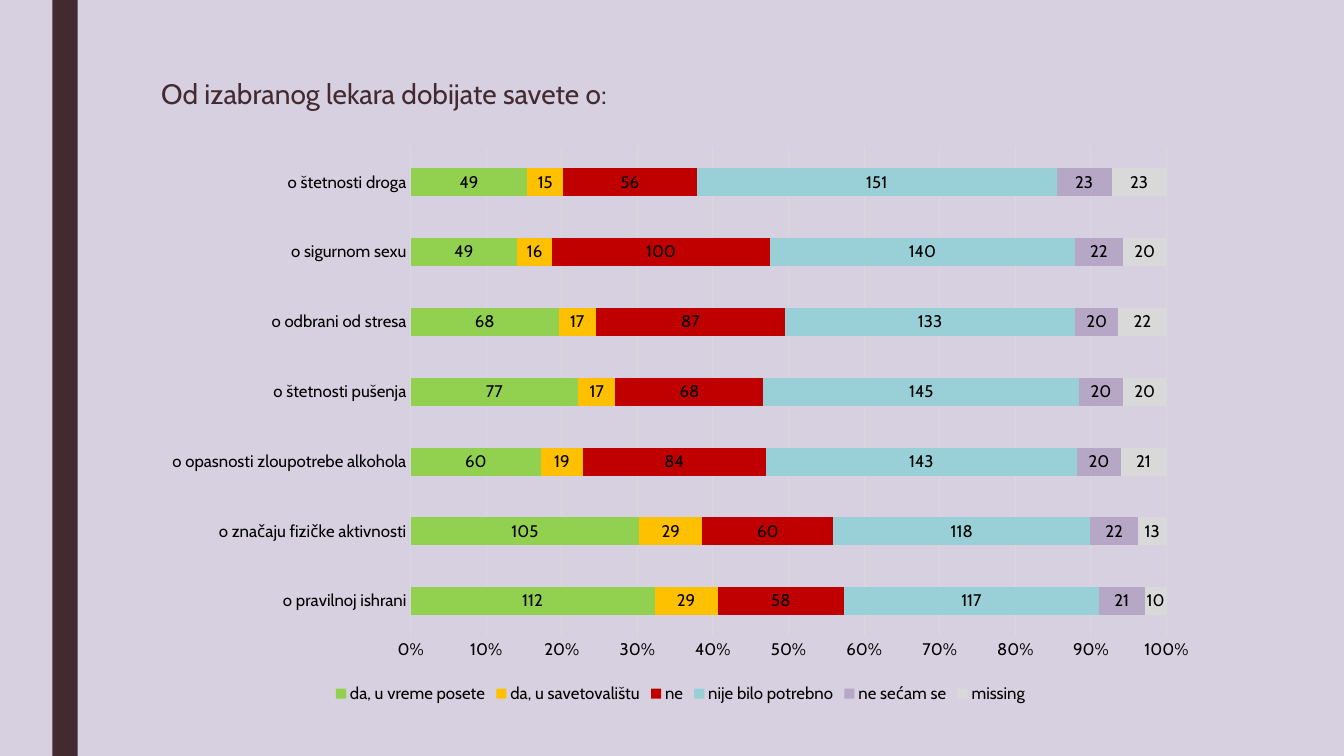
"""Build a slide with a stacked bar chart of advice given by the chosen doctor."""
from dataclasses import dataclass

from lxml import etree
from pptx import Presentation
from pptx import util as u
from pptx.chart import data as cd
from pptx.dml import color as col
from pptx.enum import chart as ce, shapes, text

TITLE = "Od izabranog lekara dobijate savete o:"
TOPICS = [
    "o pravilnoj ishrani",
    "o značaju fizičke aktivnosti",
    "o opasnosti zloupotrebe alkohola",
    "o štetnosti pušenja",
    "o odbrani od stresa",
    "o sigurnom sexu",
    "o štetnosti droga",
]
REPLIES = [
    ("da, u vreme posete", "92D050", (112, 105, 60, 77, 68, 49, 49)),
    ("da, u savetovalištu", "FFC000", (29, 29, 19, 17, 17, 16, 15)),
    ("ne", "C00000", (58, 60, 84, 68, 87, 100, 56)),
    ("nije bilo potrebno", "99D0D7", (117, 118, 143, 145, 133, 140, 151)),
    ("ne sećam se", "B5A7C5", (21, 22, 20, 20, 20, 22, 23)),
    ("missing", "D9D9D9", (10, 13, 21, 20, 22, 20, 23)),
]
PLOT = {"x": 0.245, "y": 0.02, "w": 0.714, "h": 0.855}


@dataclass
class Theme:
    font: str = "Cabin"
    back: str = "D7D0E0"
    dark: str = "432A30"
    ink: str = "000000"
    grid: str = "D9D9D9"
    head: int = 20
    body: int = 12


T = Theme()


def rgb(code):
    return col.RGBColor.from_string(code)


def box(*sides):
    return [u.Inches(side) for side in sides]


def paint(fill, code):
    fill.solid()
    fill.fore_color.rgb = rgb(code)


def style(font, size, code):
    font.name, font.size, font.bold = T.font, u.Pt(size), False
    font.color.rgb = rgb(code)


def rule(line):
    line.width = u.Pt(0.75)
    line.color.rgb = rgb(T.grid)


def add_band(slide):
    band = slide.shapes.add_shape(
        shapes.MSO_SHAPE.RECTANGLE, *box(0.52, 0, 0.25, 7.5))
    band.shadow.inherit = False
    paint(band.fill, T.dark)
    band.line.fill.background()


def add_title(slide):
    frame = slide.shapes.add_textbox(*box(1.5, 0.75, 10.5, 0.6)).text_frame
    frame.word_wrap = True
    frame.vertical_anchor = text.MSO_ANCHOR.TOP
    para = frame.paragraphs[0]
    para.line_spacing = 0.89
    run = para.add_run()
    run.text = TITLE
    style(run.font, T.head, T.dark)


def place_plot(chart):
    area = chart._chartSpace.chart.plotArea
    ns = area.nsmap["c"]
    for old in area.findall(f"{{{ns}}}layout"):
        area.remove(old)
    lay = etree.Element(f"{{{ns}}}layout")
    area.insert(0, lay)
    man = etree.SubElement(lay, f"{{{ns}}}manualLayout")
    modes = {"layoutTarget": "inner", "xMode": "edge", "yMode": "edge"}
    for tag, val in {**modes, **PLOT}.items():
        etree.SubElement(man, f"{{{ns}}}{tag}").set("val", str(val))


def add_bars(slide):
    data = cd.CategoryChartData()
    data.categories = TOPICS
    for name, _, vals in REPLIES:
        data.add_series(name, vals)
    chart = slide.shapes.add_chart(
        ce.XL_CHART_TYPE.BAR_STACKED_100, *box(1.5, 1.35, 10.5, 5.67), data).chart
    style(chart.font, T.body, T.ink)
    chart.has_title = False
    chart.has_legend = True
    chart.legend.position = ce.XL_LEGEND_POSITION.BOTTOM
    chart.legend.include_in_layout = False
    style(chart.legend.font, T.body, T.ink)

    plot = chart.plots[0]
    plot.gap_width, plot.overlap = 150, 100
    plot.vary_by_categories = False
    for bar, (_, code, _) in zip(plot.series, REPLIES):
        paint(bar.format.fill, code)
        tags = bar.data_labels
        tags.show_value = True
        tags.position = ce.XL_LABEL_POSITION.CENTER
        style(tags.font, T.body, T.ink)

    cats, vals = chart.category_axis, chart.value_axis
    for axis in (cats, vals):
        axis.major_tick_mark = axis.minor_tick_mark = ce.XL_TICK_MARK.NONE
        style(axis.tick_labels.font, T.body, T.ink)
    cats.has_major_gridlines = False
    rule(cats.format.line)
    vals.has_major_gridlines = True
    rule(vals.major_gridlines.format.line)
    vals.format.line.fill.background()
    vals.minimum_scale, vals.maximum_scale, vals.major_unit = 0, 1, 0.1
    vals.tick_labels.number_format = "0%"
    vals.tick_labels.number_format_is_linked = False
    place_plot(chart)


def main():
    deck = Presentation()
    deck.slide_width, deck.slide_height = box(13.33, 7.5)
    slide = deck.slides.add_slide(deck.slide_layouts[6])
    paint(slide.background.fill, T.back)
    add_band(slide)
    add_title(slide)
    add_bars(slide)
    deck.save("out.pptx")


if __name__ == "__main__":
    main()
